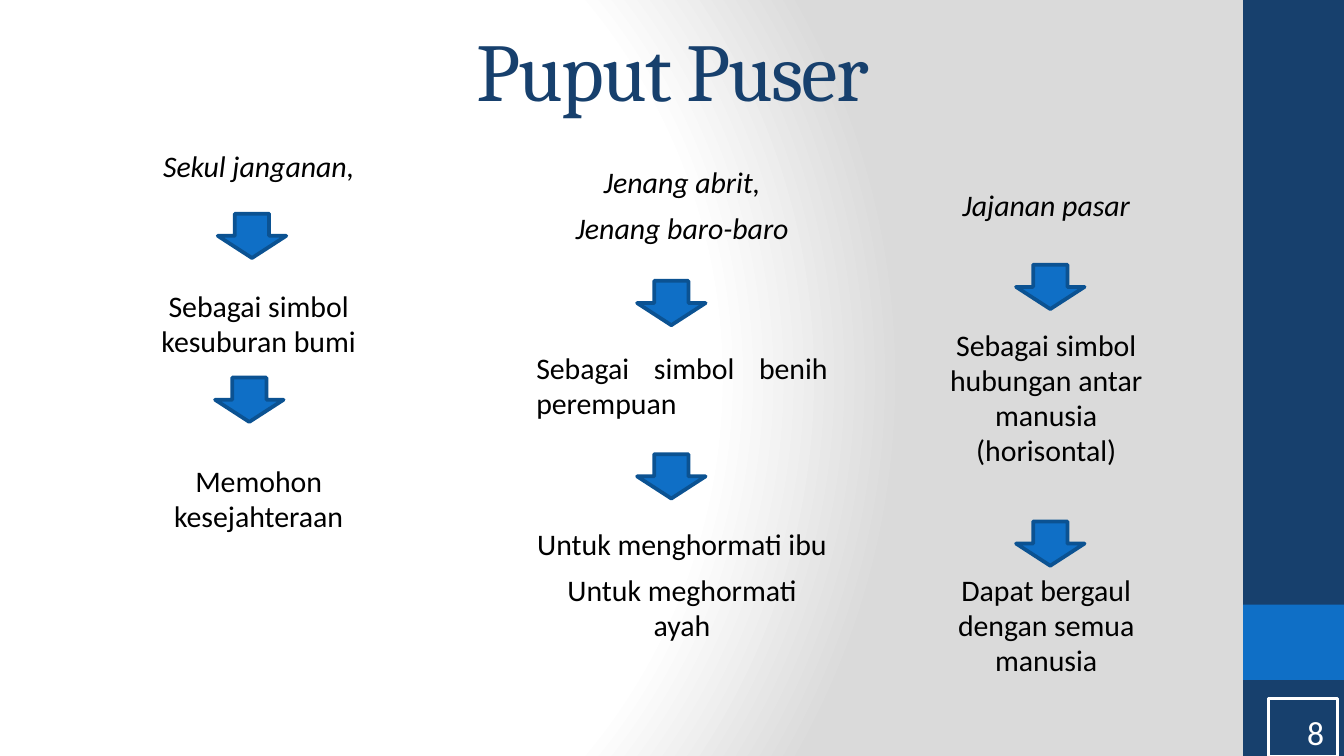
"""Build the Puput Puser slide: three offerings and what each one stands for."""
import dataclasses

import lxml.etree
import pptx
import pptx.dml.color
import pptx.enum.shapes
import pptx.enum.text
import pptx.oxml
import pptx.oxml.ns
import pptx.util

ALIGN = pptx.enum.text.PP_ALIGN
ANCHOR = pptx.enum.text.MSO_ANCHOR
SHAPE = pptx.enum.shapes.MSO_SHAPE
COLUMNS, ROWS = 100, 56.25
CELL = pptx.util.Inches(0.1)


@dataclasses.dataclass(frozen=True)
class Theme:
    """Colours, fonts and type sizes of the slide."""
    navy: str = "17406D"
    blue: str = "0F6FC6"
    outline: str = "0B5292"
    white: str = "FFFFFF"
    grey: str = "DADADA"
    black: str = "000000"
    heading_font: str = "Cambria"
    body_font: str = "Calibri"
    title_size: int = 44
    body_size: int = 16
    number_size: int = 18
    line_spacing: float = 0.98
    near_gap: int = 6
    arrow_gap: float = 56.3


@dataclasses.dataclass(frozen=True)
class Box:
    """A rectangle measured in grid columns and rows."""
    left: float
    top: float
    width: float
    height: float

    def inner(self, left, top, width, height):
        """Return a box placed relative to this one."""
        return Box(self.left + left, self.top + top, width, height)

    def lengths(self):
        """Return left, top, width and height as slide lengths."""
        return [round(cells * CELL) for cells in dataclasses.astuple(self)]


THEME = Theme()
ARROW_WIDTH, ARROW_HEIGHT = 5.1, 3.3
FLOWS = [
    (Box(9.2, 10.1, 18.6, 36.9), [(7, 5.8), (6.8, 18)],
     [["Sekul janganan,"], ["Sebagai simbol kesuburan bumi"],
      ["Memohon kesejahteraan"]]),
    (Box(37.4, 11.3, 25.2, 36.9), [(10, 9.6), (10, 22.5)],
     [["Jenang abrit,", "Jenang baro-baro"],
      ["Sebagai simbol benih perempuan"],
      ["Untuk menghormati ibu", "Untuk meghormati ayah"]]),
    (Box(67.8, 13, 18.6, 36.9), [(7.8, 6.7), (7.8, 25.8)],
     [["Jajanan pasar"], ["Sebagai simbol hubungan antar manusia (horisontal)"],
      ["Dapat bergaul dengan semua manusia"]]),
]
JUSTIFIED = "Sebagai simbol benih perempuan"


def rgb(code):
    """Turn a hex code into a colour."""
    return pptx.dml.color.RGBColor.from_string(code)


def style_span(span, name, size, color, italic=False):
    """Set the font of one run."""
    span.font.name = name
    span.font.size = pptx.util.Pt(size)
    span.font.color.rgb = rgb(color)
    span.font.bold = False
    span.font.italic = italic


def prepare_frame(frame, anchor):
    """Give a text frame even margins, wrapping and an anchor."""
    frame.word_wrap = True
    frame.auto_size = pptx.enum.text.MSO_AUTO_SIZE.NONE
    frame.vertical_anchor = anchor
    frame.margin_left = frame.margin_right = CELL
    frame.margin_top = frame.margin_bottom = CELL


def place(holder, box):
    """Move a placeholder to a box."""
    holder.left, holder.top, holder.width, holder.height = box.lengths()


def add_block(page, kind, box, fill=None, line=None, line_width=0):
    """Add a flat preset shape."""
    shape = page.shapes.add_shape(kind, *box.lengths())
    shape.shadow.inherit = False
    if fill:
        shape.fill.solid()
        shape.fill.fore_color.rgb = rgb(fill)
    else:
        shape.fill.background()
    if line:
        shape.line.color.rgb = rgb(line)
        shape.line.width = pptx.util.Pt(line_width)
    else:
        shape.line.fill.background()
    return shape


def paint_background(page):
    """Fill the page with a circular white to grey gradient."""
    stops = [(0, THEME.white), (75, THEME.white), (100, THEME.grey)]
    stop_xml = "".join(
        f'<a:gs pos="{share * 1000}"><a:srgbClr val="{color}"/></a:gs>'
        for share, color in stops)
    background = pptx.oxml.parse_xml(
        f'<p:bg {pptx.oxml.ns.nsdecls("p", "a")}><p:bgPr>'
        f'<a:gradFill rotWithShape="1"><a:gsLst>{stop_xml}</a:gsLst>'
        '<a:path path="circle"><a:fillToRect l="20000" t="50000" r="100000" b="50000"/>'
        '</a:path></a:gradFill><a:effectLst/></p:bgPr></p:bg>')
    page.element.cSld.insert(0, background)


def add_sidebar(page, box):
    """Draw the right band with its accent and the page number."""
    add_block(page, SHAPE.RECTANGLE, box, THEME.navy)
    add_block(page, SHAPE.RECTANGLE, box.inner(0, 45, box.width, 5.6), THEME.blue)
    number = add_block(page, SHAPE.RECTANGLE, box.inner(1.9, 52, 5.1, 4.3),
                       line=THEME.white, line_width=1.5)
    prepare_frame(number.text_frame, ANCHOR.TOP)
    number.text_frame.text = "8"
    para = number.text_frame.paragraphs[0]
    para.alignment = ALIGN.RIGHT
    style_span(para.runs[0], THEME.body_font, THEME.number_size, THEME.white)


def fill_title(holder, box):
    """Place and format the slide title."""
    place(holder, box)
    prepare_frame(holder.text_frame, ANCHOR.BOTTOM)
    holder.text_frame.text = "Puput Puser"
    para = holder.text_frame.paragraphs[0]
    para.alignment = ALIGN.CENTER
    span = para.runs[0]
    style_span(span, THEME.heading_font, THEME.title_size, THEME.navy)
    span.font._element.set("spc", "-100")


def format_step(para, gap, italic):
    """Format one line of a flow without a bullet."""
    properties = para._p.get_or_add_pPr()
    properties.set("marL", str(pptx.util.Inches(0.15)))
    properties.set("indent", "0")
    lxml.etree.SubElement(properties, pptx.oxml.ns.qn("a:buNone"))
    para.alignment = ALIGN.JUSTIFY if para.text == JUSTIFIED else ALIGN.CENTER
    para.line_spacing = THEME.line_spacing
    para.space_before = pptx.util.Pt(gap)
    para.space_after = pptx.util.Pt(0)
    style_span(para.runs[0], THEME.body_font, THEME.body_size, THEME.black, italic)


def fill_flow(page, holder, box, arrows, steps):
    """Write one offering's steps and draw the arrows between them."""
    place(holder, box)
    frame = holder.text_frame
    prepare_frame(frame, ANCHOR.TOP)
    frame.text = "\n".join(line for step in steps for line in step)
    paragraphs = iter(frame.paragraphs)
    for step_index, step in enumerate(steps):
        for line_index in range(len(step)):
            opening_gap = THEME.arrow_gap if step_index else 0
            gap = THEME.near_gap if line_index else opening_gap
            format_step(next(paragraphs), gap, italic=step_index == 0)
    for left, top in arrows:
        add_block(page, SHAPE.DOWN_ARROW, box.inner(left, top, ARROW_WIDTH, ARROW_HEIGHT),
                  THEME.blue, THEME.outline, 2)


def main():
    """Build and save the deck."""
    deck = pptx.Presentation()
    deck.slide_width, deck.slide_height = round(COLUMNS * CELL), round(ROWS * CELL)
    page = deck.slides.add_slide(deck.slide_layouts.get_by_name("Comparison"))
    paint_background(page)
    add_sidebar(page, Box(92.5, 0, 7.5, ROWS))
    title, *bodies = list(page.placeholders)
    fill_title(title, Box(21.2, 2.8, 57.7, 7))
    for holder, (box, arrows, steps) in zip(bodies, FLOWS):
        fill_flow(page, holder, box, arrows, steps)
    for spare in bodies[len(FLOWS):]:
        spare.element.getparent().remove(spare.element)
    deck.save("out.pptx")


if __name__ == "__main__":
    main()
